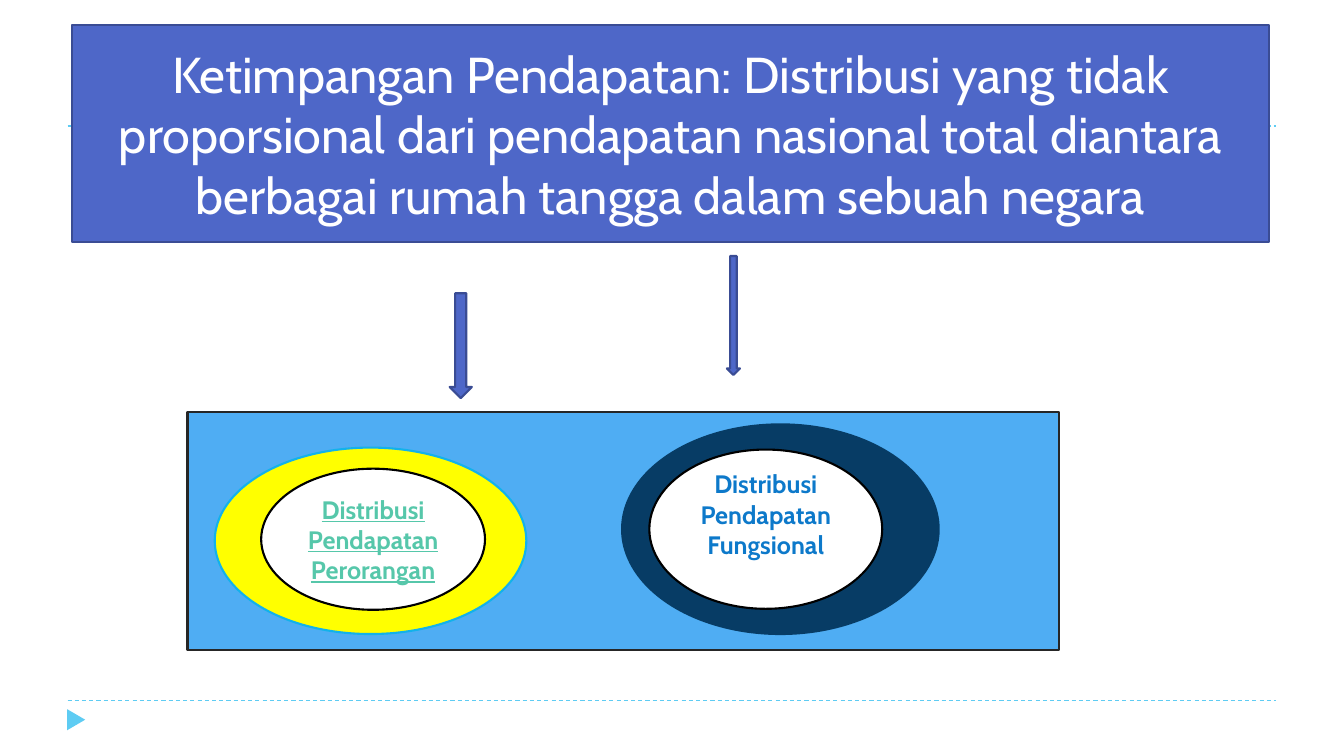
from lxml.etree import SubElement
from pptx import Presentation
from pptx.dml.color import RGBColor
from pptx.enum.dml import MSO_LINE
from pptx.enum.shapes import MSO_CONNECTOR, MSO_SHAPE
from pptx.enum.text import MSO_ANCHOR, PP_ALIGN
from pptx.oxml.ns import qn
from pptx.util import Inches, Pt

WIDTH, HEIGHT = 13.33, 7.5
MARGIN = 0.67
FONT = "Cabin"
SKY, INDIGO, INDIGO_EDGE = "5ECCF3", "4E67C8", "3A4C94"
RULE_HEIGHTS = (6.95, 1.25)

# preset, (left, top, width, height), fill, line
PANEL = (MSO_SHAPE.RECTANGLE, (1.86, 4.09, 8.64, 2.36), "4FADF3", "262626")
RINGS = [
    ((6.17, 4.21, 3.14, 2.08), "073C65", "073C65"),
    ((2.13, 4.44, 3.09, 1.85), "FFFF00", "12B2EB"),
]
# text, place, colour, underlined, extra space below the text
LABELS = [
    ("Distribusi Pendapatan Perorangan", (2.59, 4.65, 2.22, 1.4), "56C7AA", True, 0),
    ("Distribusi Pendapatan Fungsional", (6.44, 4.46, 2.31, 1.58), "0D79CA", False, 0.3),
]
TITLE = ("Ketimpangan Pendapatan: Distribusi yang tidak proporsional dari "
         "pendapatan nasional total diantara berbagai rumah tangga dalam sebuah negara")
TITLE_PLACE = (0.71, 0.25, 11.88, 2.15)
ARROWS = [(4.46, 2.91, 0.22, 1.04), (7.21, 2.54, 0.13, 1.18)]


def colour(value):
    return RGBColor.from_string(value)


def add_figure(page, preset, place, fill, line=None):
    figure = page.shapes.add_shape(preset, *map(Inches, place))
    figure.shadow.inherit = False
    figure.fill.solid()
    figure.fill.fore_color.rgb = colour(fill)
    if line:
        figure.line.color.rgb = colour(line)
        figure.line.width = Pt(1.5)
    else:
        figure.line.fill.background()
    return figure


def write(figure, text, size, ink, bold=False, underline=False, space_below=0):
    frame = figure.text_frame
    frame.word_wrap = True
    frame.vertical_anchor = MSO_ANCHOR.MIDDLE
    frame.margin_bottom = Inches(0.05 + space_below)
    para = frame.paragraphs[0]
    para.alignment = PP_ALIGN.CENTER
    span = para.add_run()
    span.text = text
    span.font.name = FONT
    span.font.size = Pt(size)
    span.font.bold = bold
    span.font.underline = underline
    span.font.color.rgb = colour(ink)


def add_rule(page, top):
    rule = page.shapes.add_connector(
        MSO_CONNECTOR.STRAIGHT, Inches(MARGIN), Inches(top),
        Inches(WIDTH - MARGIN), Inches(top))
    rule.line.color.rgb = colour(SKY)
    rule.line.width = Pt(0.75)
    rule.line.dash_style = MSO_LINE.DASH
    SubElement(rule._element.spPr, qn("a:effectLst"))


def main():
    deck = Presentation()
    deck.slide_width, deck.slide_height = Inches(WIDTH), Inches(HEIGHT)
    page = deck.slides.add_slide(deck.slide_layouts[6])

    for top in RULE_HEIGHTS:
        add_rule(page, top)
    marker = add_figure(page, MSO_SHAPE.ISOSCELES_TRIANGLE, (0.65, 7.05, 0.21, 0.18), SKY)
    marker.rotation = 90

    add_figure(page, *PANEL)
    for place, fill, line in RINGS:
        add_figure(page, MSO_SHAPE.FLOWCHART_CONNECTOR, place, fill, line)
    for text, place, ink, underline, space_below in LABELS:
        core = add_figure(page, MSO_SHAPE.FLOWCHART_CONNECTOR, place, "FFFFFF", "000000")
        write(core, text, 18, ink, True, underline, space_below)

    banner = add_figure(page, MSO_SHAPE.RECTANGLE, TITLE_PLACE, INDIGO, INDIGO_EDGE)
    write(banner, TITLE, 36, "FFFFFF")
    for place in ARROWS:
        add_figure(page, MSO_SHAPE.DOWN_ARROW, place, INDIGO, INDIGO_EDGE)

    deck.save("out.pptx")


if __name__ == "__main__":
    main()
